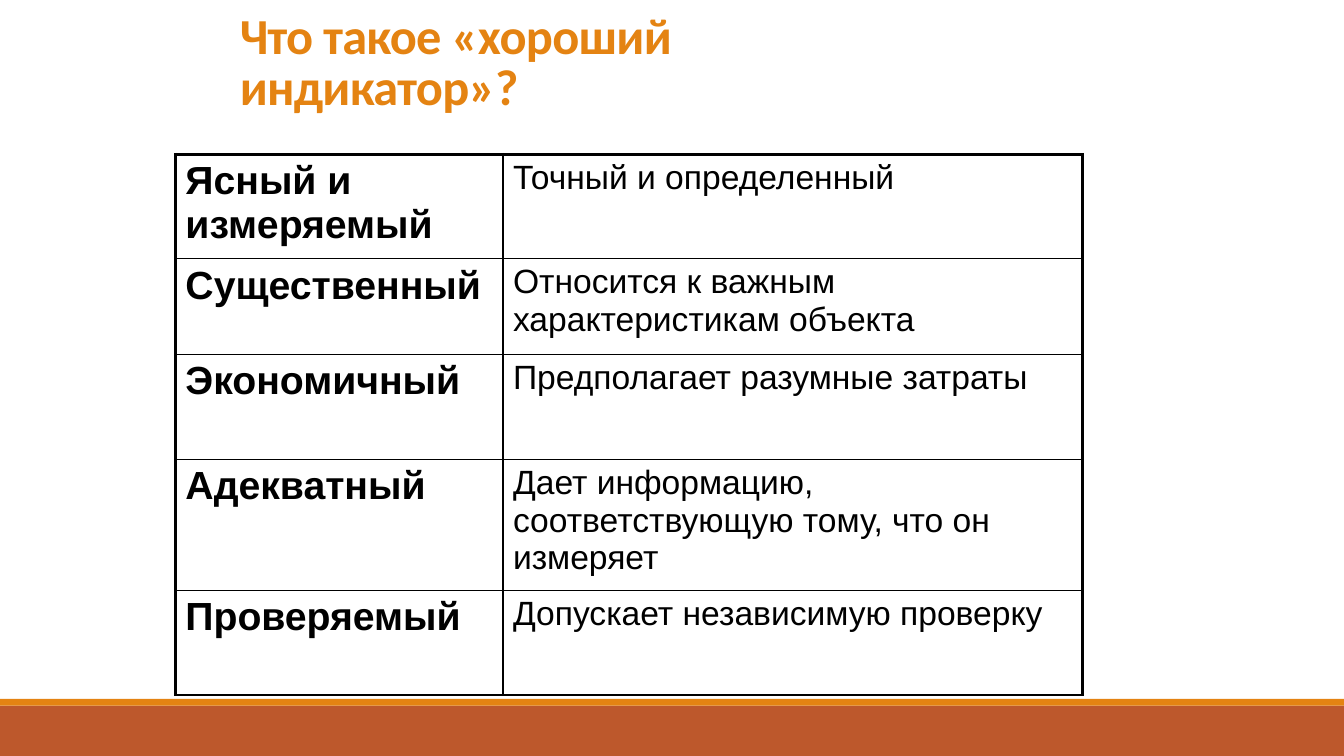
from lxml import etree
from pptx import Presentation
from pptx import util as u
from pptx.dml.color import RGBColor
from pptx.enum import shapes, text
from pptx.oxml import ns

HUES = {"rust": "BD582C", "gold": "E48312", "ink": "000000"}
TITLE = {"size": u.Pt(36), "name": "Calibri", "bold": True}
TERM = {"size": u.Pt(28), "name": "Arial", "bold": True}
NOTE = {"size": u.Pt(24), "name": "Arial", "bold": False}
FRAME = {"word_wrap": True, "vertical_anchor": text.MSO_ANCHOR.BOTTOM,
         "margin_left": u.Pt(7.2), "margin_right": u.Pt(7.2),
         "margin_top": u.Pt(3.6), "margin_bottom": u.Pt(27.5)}
COLS = [234, 414]
ROWS = [
    (68.4, "Ясный и измеряемый", "Точный и определенный"),
    (68.4, "Существенный", "Относится к важным характеристикам объекта"),
    (74.9, "Экономичный", "Предполагает разумные затраты"),
    (86.8, "Адекватный", "Дает информацию, соответствующую тому, что он измеряет"),
    (74.9, "Проверяемый", "Допускает независимую проверку"),
]


def apply(item, values):
    """Set each named value on the item."""
    for key, value in values.items():
        setattr(item, key, value)


def write(frame, words, style, hue):
    """Put styled words in the first paragraph and return its run."""
    run = frame.paragraphs[0].add_run()
    run.text = words
    apply(run.font, style)
    run.font.color.rgb = RGBColor.from_string(HUES[hue])
    return run


def band(slide, box, hue):
    """Draw a plain filled bar."""
    bar = slide.shapes.add_shape(shapes.MSO_SHAPE.RECTANGLE, *map(u.Pt, box))
    bar.shadow.inherit = False
    bar.fill.solid()
    bar.fill.fore_color.rgb = RGBColor.from_string(HUES[hue])
    bar.line.fill.background()


def footer(slide, box):
    """Draw the wide band with a thin strip on top of it."""
    left, top, width, height = box
    strip = 4.8
    band(slide, box, "rust")
    band(slide, (left, top - strip, width, strip), "gold")


def title(slide, box, words):
    """Write the heading in its box."""
    frame = slide.shapes.add_textbox(*map(u.Pt, box)).text_frame
    apply(frame, FRAME)
    frame.paragraphs[0].line_spacing = 0.85
    run = write(frame, words, TITLE, "gold")
    run.font._element.set("spc", "-50")


def edge(cell, side, width):
    """Add one border line to a cell."""
    props = cell._tc.get_or_add_tcPr()
    line = etree.SubElement(props, ns.qn("a:ln" + side), w=str(u.Pt(width)))
    fill = etree.SubElement(line, ns.qn("a:solidFill"))
    etree.SubElement(fill, ns.qn("a:srgbClr"), val=HUES["ink"])


def grid(slide, left, top):
    """Build the table of terms with a heavy outer border."""
    height = sum(row[0] for row in ROWS)
    box = (left, top, sum(COLS), height)
    table = slide.shapes.add_table(len(ROWS), len(COLS), *map(u.Pt, box)).table
    apply(table, {"first_row": False, "horz_banding": False})
    for col, width in zip(table.columns, COLS):
        col.width = u.Pt(width)
    for r, (tall, *words) in enumerate(ROWS):
        table.rows[r].height = u.Pt(tall)
        for c, style in enumerate((TERM, NOTE)):
            cell = table.cell(r, c)
            write(cell.text_frame, words[c], style, "ink")
            outer = {"L": c == 0, "R": c == len(COLS) - 1,
                     "T": r == 0, "B": r == len(ROWS) - 1}
            for side, heavy in outer.items():
                edge(cell, side, 2.25 if heavy else 1)
            cell.fill.background()


def main():
    """Build and save the slide."""
    deck = Presentation()
    apply(deck, {"slide_width": u.Pt(960), "slide_height": u.Pt(540)})
    slide = deck.slides.add_slide(deck.slide_layouts[6])
    footer(slide, (0, 504, 960, 36))
    title(slide, (164.2, 20.2, 523.4, 90), "Что такое «хороший индикатор»?")
    grid(slide, 125.3, 110.2)
    deck.save("out.pptx")


if __name__ == "__main__":
    main()
